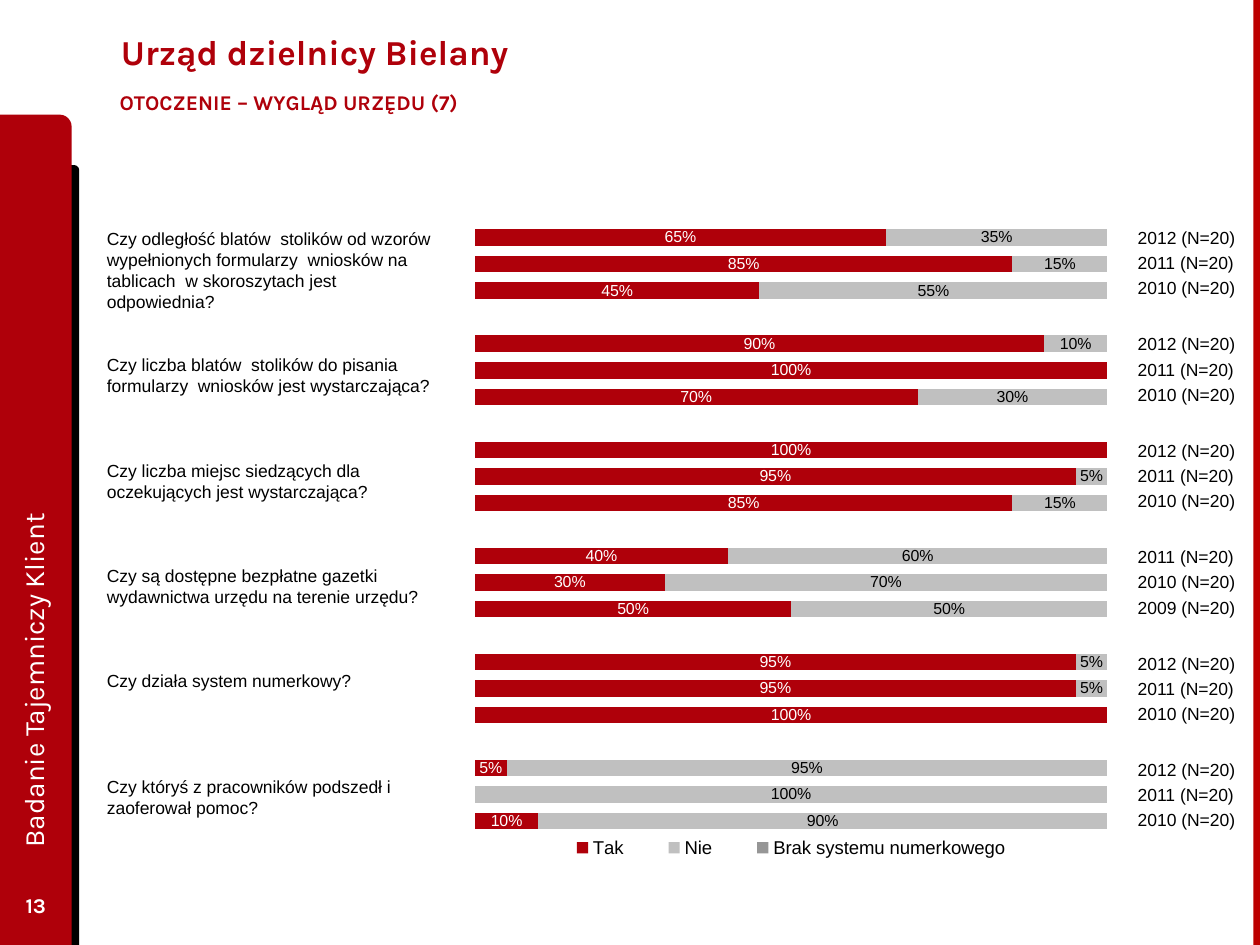
from lxml import etree
from pptx import Presentation
from pptx.chart.data import CategoryChartData
from pptx.dml.color import RGBColor
from pptx.enum.chart import XL_CHART_TYPE, XL_LEGEND_POSITION, XL_TICK_LABEL_POSITION
from pptx.enum.shapes import MSO_SHAPE
from pptx.enum.text import MSO_ANCHOR, PP_ALIGN
from pptx.oxml.ns import qn
from pptx.util import Pt

RED = RGBColor(0xAF, 0x00, 0x0A)
STRIPE = RGBColor(0xBD, 0x00, 0x00)
SILVER = RGBColor(0xC0, 0xC0, 0xC0)
GREY = RGBColor(0x96, 0x96, 0x96)
BLACK = RGBColor(0, 0, 0)
WHITE = RGBColor(255, 255, 255)
BAR = XL_CHART_TYPE.BAR_STACKED
RIGHT = XL_LEGEND_POSITION.RIGHT
NO_LABELS = XL_TICK_LABEL_POSITION.NONE
RECT = MSO_SHAPE.RECTANGLE
TAB = MSO_SHAPE.ROUND_1_RECTANGLE
TOP, MIDDLE = MSO_ANCHOR.TOP, MSO_ANCHOR.MIDDLE
LEFT, CENTER = PP_ALIGN.LEFT, PP_ALIGN.CENTER
LINE = 12.05

QUESTIONS = [
    (0, "Czy odległość blatów  stolików od wzorów wypełnionych formularzy  wniosków na "
        "tablicach  w skoroszytach jest odpowiednia?"),
    (2, "Czy liczba blatów  stolików do pisania formularzy  wniosków jest wystarczająca?"),
    (3, "Czy liczba miejsc siedzących dla oczekujących jest wystarczająca?"),
    (3, "Czy są dostępne bezpłatne gazetki  wydawnictwa urzędu na terenie urzędu?"),
    (3, "Czy działa system numerkowy?"),
    (4, "Czy któryś z pracowników podszedł i zaoferował pomoc?"),
]
LAST_YEARS = [2012, 2012, 2012, 2011, 2012, 2012]
YES = [0.65, 0.85, 0.45, None, 0.9, 1, 0.7, None, 1, 0.95, 0.85, None,
       0.4, 0.3, 0.5, None, 0.95, 0.95, 1, None, 0.05, None, 0.1]
NO = [0.35, 0.15, 0.55, None, 0.1, None, 0.3, None, None, 0.05, 0.15, None,
      0.6, 0.7, 0.5, None, 0.05, 0.05, None, None, 0.95, 1, 0.9]
SERIES = [("Tak", YES, RED, WHITE), ("Nie", NO, SILVER, BLACK),
          ("Brak systemu numerkowego", [None] * len(YES), GREY, BLACK)]


def write(tf, text, font="Arial", size=10, color=BLACK, bold=False, align=LEFT,
          anchor=TOP, spacing=None, gaps=(), inset=7.2, wrap=True):
    tf.word_wrap = wrap
    tf.vertical_anchor = anchor
    tf.margin_left = tf.margin_right = Pt(inset)
    tf.margin_top = tf.margin_bottom = Pt(3.6)
    for i, line in enumerate(text.split("\n")):
        p = tf.paragraphs[0] if i == 0 else tf.add_paragraph()
        p.alignment = align
        if spacing:
            p.line_spacing = spacing
        if i and gaps:
            p.space_before = Pt(gaps[i])
        r = p.add_run()
        r.text = line
        r.font.name, r.font.size, r.font.bold = font, Pt(size), bold
        r.font.color.rgb = color


def place(parent, index, inner=False, **frame):
    old = parent.find(qn("c:layout"))
    if old is not None:
        parent.remove(old)
    layout = etree.Element(qn("c:layout"))
    manual = etree.SubElement(layout, qn("c:manualLayout"))
    if inner:
        etree.SubElement(manual, qn("c:layoutTarget"), val="inner")
    for key in ("xMode", "yMode"):
        etree.SubElement(manual, qn("c:" + key), val="edge")
    for key, value in frame.items():
        etree.SubElement(manual, qn("c:" + key), val=str(value))
    parent.insert(index, layout)


class Deck:
    """Slide builder that keeps the style and the current slide."""

    def __init__(self):
        self.prs = Presentation()
        self.prs.slide_width, self.prs.slide_height = Pt(720), Pt(540)
        self.s = self.prs.slides.add_slide(self.prs.slide_layouts[6])

    def shape(self, kind, x, y, w, h, fill):
        sp = self.s.shapes.add_shape(kind, Pt(x), Pt(y), Pt(w), Pt(h))
        sp.shadow.inherit = False
        sp.fill.solid()
        sp.fill.fore_color.rgb = fill
        sp.line.fill.background()
        return sp

    def text(self, x, y, w, h, text, rotation=0, **style):
        sp = self.s.shapes.add_textbox(Pt(x), Pt(y), Pt(w), Pt(h))
        sp.rotation = rotation
        write(sp.text_frame, text, **style)

    def chart(self, x, y, w, h, series):
        data = CategoryChartData(number_format="0%")
        data.categories = [str(i + 1) for i in range(len(series[0][1]))]
        for name, values, _, _ in series:
            data.add_series(name, values)
        chart = self.s.shapes.add_chart(BAR, Pt(x), Pt(y), Pt(w), Pt(h), data).chart
        chart.has_title = False
        chart.font.name, chart.font.size = "Arial", Pt(7.3)
        chart.font.color.rgb = BLACK
        cat, val = chart.category_axis, chart.value_axis
        cat.reverse_order = True
        val.minimum_scale, val.maximum_scale, val.major_unit = 0, 1, 0.2
        val.has_major_gridlines = False
        for axis in (cat, val):
            axis.visible = False
            axis.tick_label_position = NO_LABELS
        plot = chart.plots[0]
        plot.gap_width, plot.overlap, plot.vary_by_categories = 60, 100, False
        for ser, (_, _, fill, label) in zip(plot.series, series):
            ser.format.fill.solid()
            ser.format.fill.fore_color.rgb = fill
            labels = ser.data_labels
            labels.show_value = True
            labels.number_format, labels.number_format_is_linked = "0%", False
            labels.font.name, labels.font.size = "Arial", Pt(9.1)
            labels.font.color.rgb = label
        chart.has_legend = True
        legend = chart.legend
        legend.position, legend.include_in_layout = RIGHT, False
        legend.font.name, legend.font.size = "Arial", Pt(10.6)
        legend.font.color.rgb = BLACK
        area = plot._element.getparent()
        place(area, 0, inner=True, x=0, y=0.04, w=1, h=0.91)
        place(legend._element, 1, x=0.1, y=0.95, w=0.8, h=0.04)


def main():
    d = Deck()
    d.shape(TAB, 28, 94.3, 17.3, 445.7, BLACK)
    d.shape(TAB, 0, 65.5, 41, 474.5, RED)
    d.shape(RECT, 716.2, 0, 3.8, 540, STRIPE)
    heading = {"font": "Karla", "color": RED, "bold": True}
    d.text(62, 3.6, 559.4, 51.8, "Urząd dzielnicy Bielany", size=20, anchor=MIDDLE, **heading)
    d.text(54, 47.5, 277, 23.8, "OTOCZENIE – WYGLĄD URZĘDU (7)", size=12, inset=14.4,
           wrap=False, **heading)
    d.chart(271.4, 113, 361.4, 383, SERIES)
    sp = d.shape(RECT, 54, 126.7, 208.8, 346.3, WHITE)
    write(sp.text_frame, "\n".join(q for _, q in QUESTIONS),
          gaps=[n * LINE for n, _ in QUESTIONS])
    for i, year in enumerate(LAST_YEARS):
        text = "\n".join(f"{year - k} (N=20)" for k in range(3))
        d.text(643, 123.8 + 60.8 * i, 94.3, 65.5, text, spacing=1.2)
    side = {"font": "Karla", "color": WHITE, "anchor": MIDDLE}
    d.text(0, 502.6, 41, 28.8, "13", size=12, bold=True, align=CENTER, **side)
    d.text(-188.6, 265.7, 414.7, 36.7, "Badanie Tajemniczy Klient", rotation=270, size=16, **side)
    d.prs.save("out.pptx")


if __name__ == "__main__":
    main()
